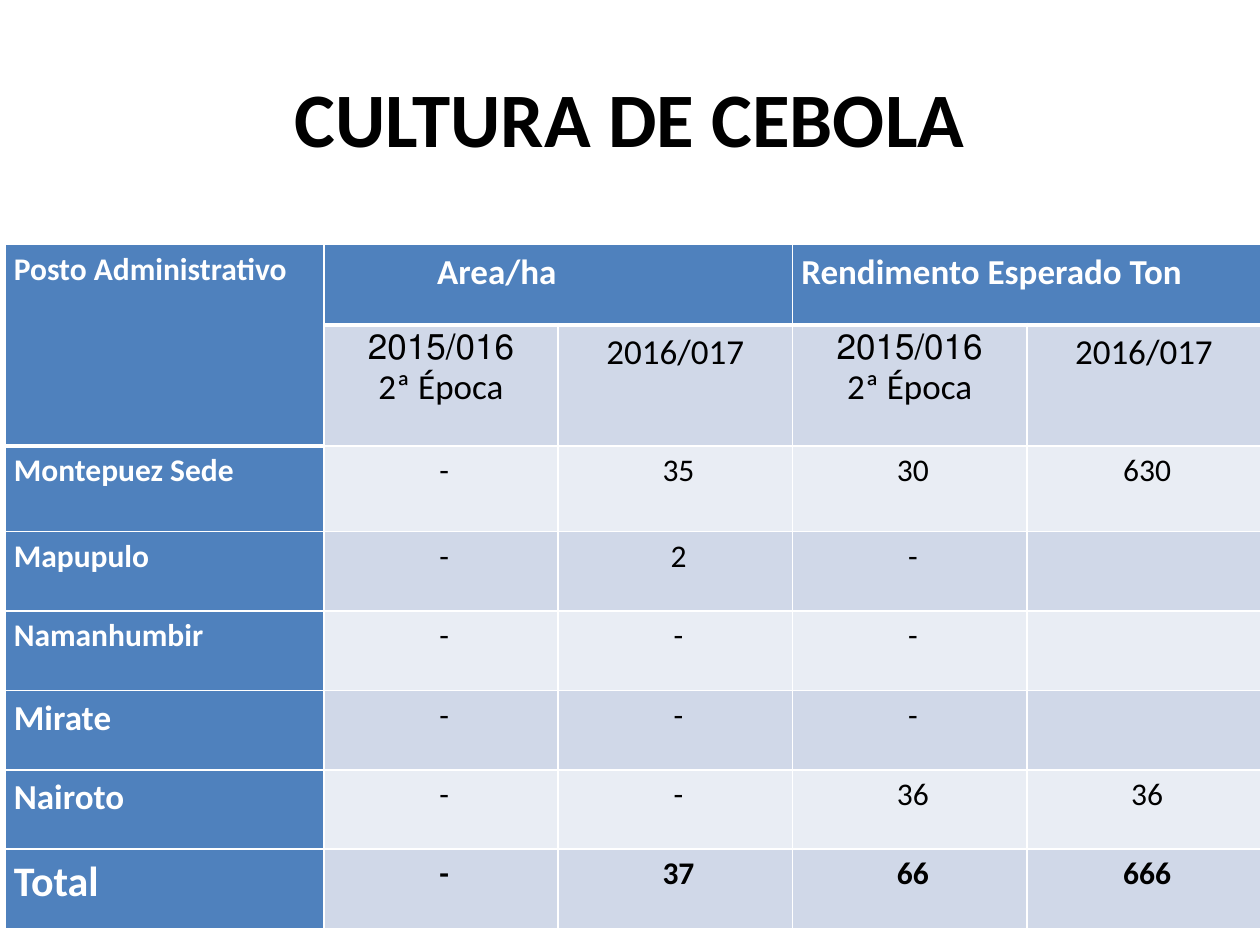
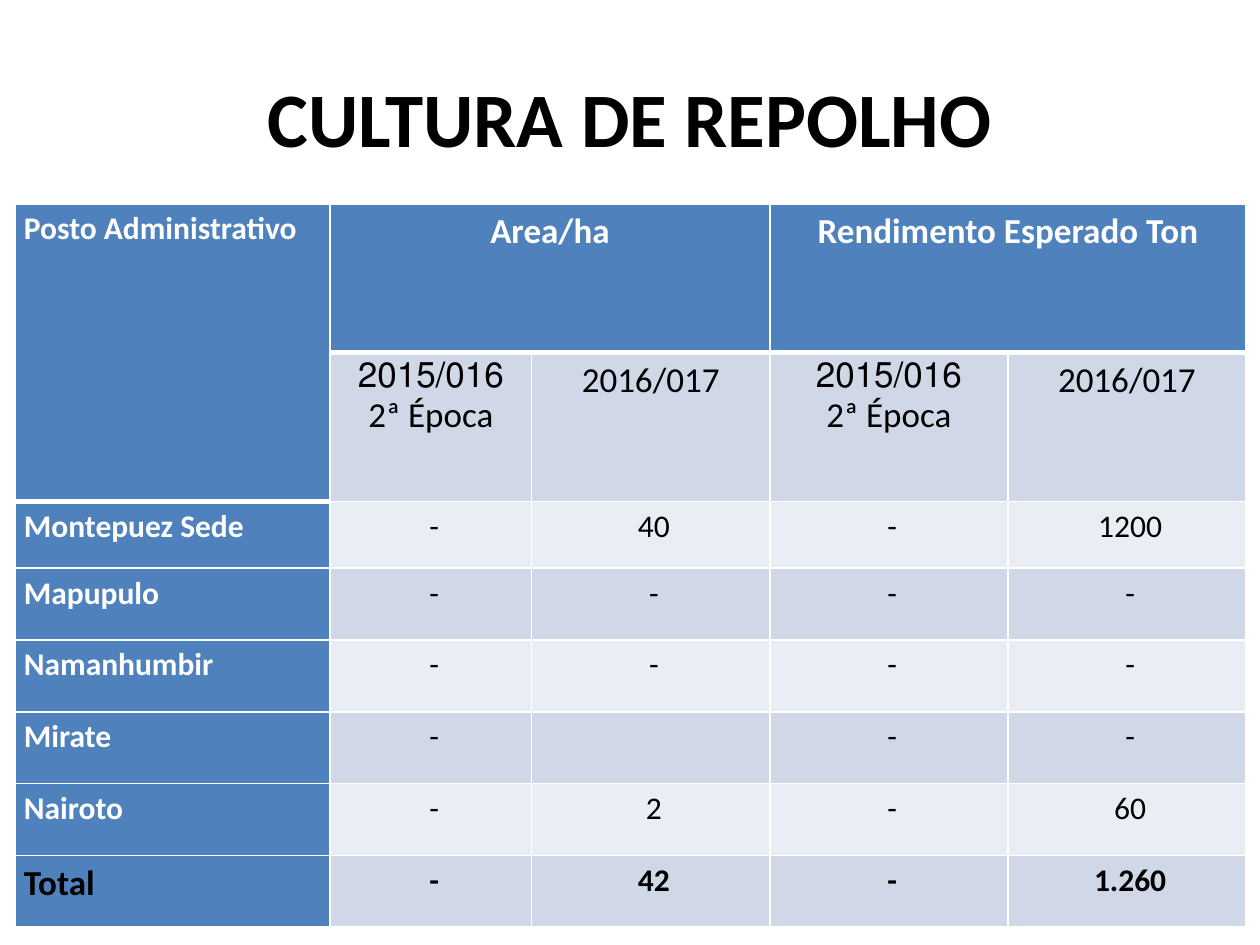
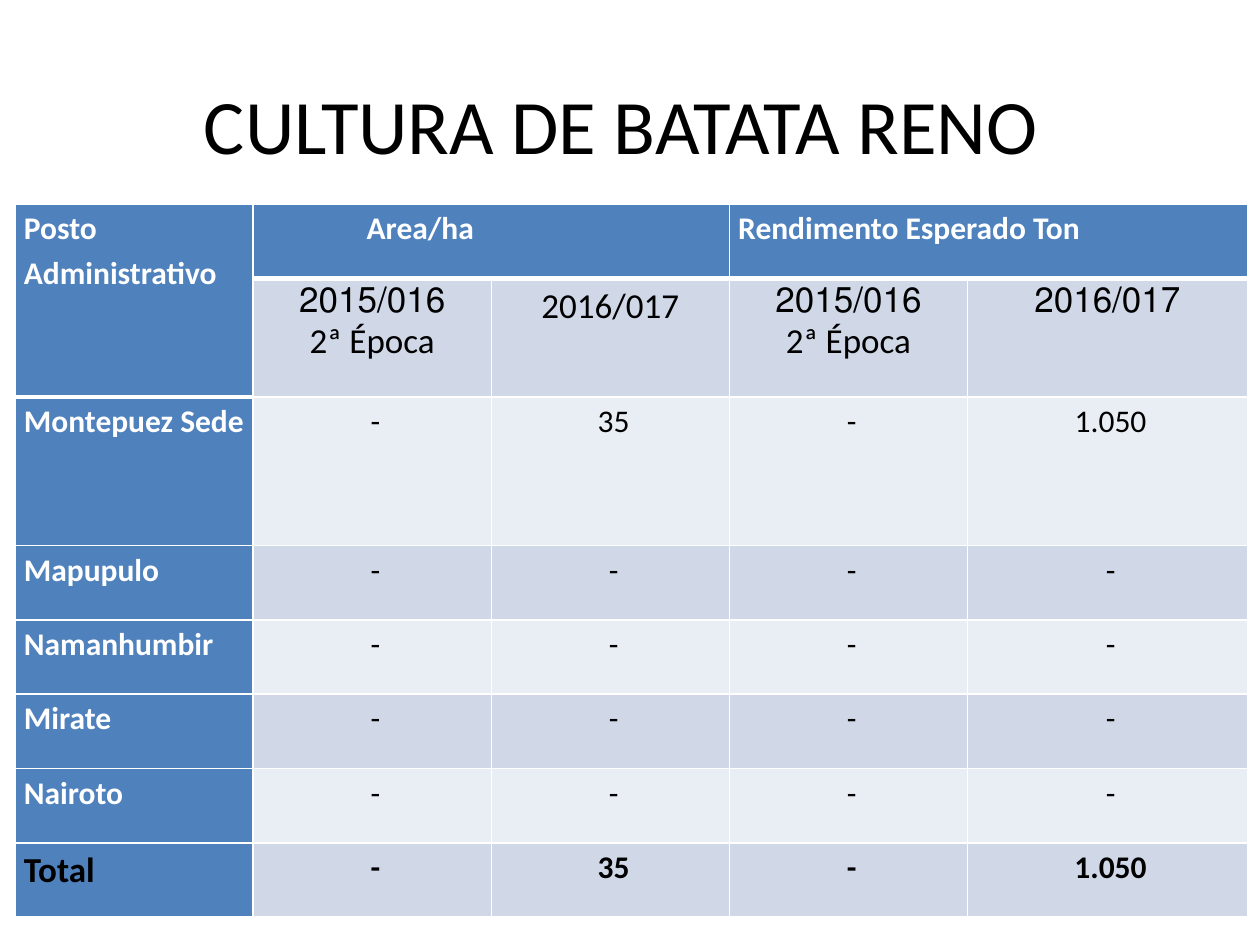
from lxml import etree
from pptx import Presentation
from pptx.dml.color import RGBColor
from pptx.enum.text import MSO_ANCHOR, PP_ALIGN
from pptx.oxml.ns import qn
from pptx.util import Inches, Pt

LEFT, CENTER = PP_ALIGN.LEFT, PP_ALIGN.CENTER
MIDDLE = MSO_ANCHOR.MIDDLE

FONT = "Calibri"
BLACK = RGBColor(0x00, 0x00, 0x00)
WHITE = RGBColor(0xFF, 0xFF, 0xFF)
HEADER_BLUE = RGBColor(0x4F, 0x81, 0xBD)
BAND_DARK = RGBColor(0xD0, 0xD8, 0xE8)
BAND_LIGHT = RGBColor(0xE9, 0xED, 0xF4)

POSTS = ["Montepuez Sede", "Mapupulo", "Namanhumbir", "Mirate", "Nairoto", "Total"]
SEASONS = [["2015/016", "2ª Época"], ["2016/017"]] * 2

# One entry per slide: title, table geometry, text sizes and values by post
CROPS = [
    dict(title="CULTURA DE CEBOLA", title_at=(0.5, 0.3), title_bold=True,
         table_at=(0.04, 1.94),
         columns=[2.53, 1.86, 1.86, 1.86, 1.86],
         rows=[0.64, 0.96, 0.68] + [0.63] * 5,
         header_size=20, header_centered=False, rtl_columns=(1, 3),
         post_sizes=[18, 18, 18, 20, 20, 24], total_color=WHITE,
         values=[["-", "35", "30", "630"], ["-", "2", "-", ""],
                 ["-", "-", "-", ""], ["-", "-", "-", ""],
                 ["-", "-", "36", "36"], ["-", "37", "66", "666"]]),
    dict(title="CULTURA DE REPOLHO", title_at=(0.5, 0.3), title_bold=True,
         table_at=(0.12, 1.62),
         columns=[2.5, 1.6, 1.89, 1.89, 1.89],
         rows=[1.18, 1.18, 0.53] + [0.57] * 5,
         header_size=20, header_centered=True, rtl_columns=(1, 3),
         post_sizes=[18] * 5 + [20], total_color=BLACK,
         values=[["-", "40", "-", "1200"], ["-"] * 4, ["-"] * 4,
                 ["-", "", "-", "-"], ["-", "2", "-", "60"],
                 ["-", "42", "-", "1.260"]]),
    dict(title="CULTURA DE BATATA RENO", title_at=(0.43, 0.36), title_bold=False,
         table_at=(0.12, 1.62),
         columns=[1.89, 1.89, 1.89, 1.89, 2.22],
         rows=[0.59, 0.94, 1.18] + [0.59] * 5,
         header_size=18, header_centered=False, rtl_columns=(1, 3, 4),
         post_sizes=[18] * 5 + [20], total_color=BLACK,
         values=[["-", "35", "-", "1.050"], ["-"] * 4, ["-"] * 4,
                 ["-"] * 4, ["-"] * 4, ["-", "35", "-", "1.050"]]),
]


def write(frame, lines, size, color, bold, align, spacing=None, indent=0, rtl=False):
    for index, line in enumerate(lines):
        paragraph = frame.paragraphs[0] if index == 0 else frame.add_paragraph()
        paragraph.alignment = align
        if spacing:
            paragraph.line_spacing = spacing
        properties = paragraph._p.get_or_add_pPr()
        if indent:
            properties.set("marL", str(Inches(indent)))
            properties.set("indent", "0")
        if rtl:
            properties.set("rtl", "1")
        run = paragraph.add_run()
        run.text = line
        run.font.name = FONT
        run.font.size = Pt(size)
        run.font.bold = bold
        run.font.color.rgb = color


def style_cell(cell, fill, thick_sides, margins=None):
    properties = cell._tc.get_or_add_tcPr()
    for side in "LRTB":
        width = Pt(3 if side in thick_sides else 1)
        line = etree.SubElement(properties, qn(f"a:ln{side}"), w=str(width))
        solid = etree.SubElement(line, qn("a:solidFill"))
        etree.SubElement(solid, qn("a:srgbClr"), val=str(WHITE))
    cell.fill.solid()
    cell.fill.fore_color.rgb = fill
    if margins:
        cell.margin_left, cell.margin_right = Inches(margins[0]), Inches(margins[1])
        cell.margin_top = cell.margin_bottom = 0


presentation = Presentation()
presentation.slide_width = Inches(10)
presentation.slide_height = Inches(7.5)

for crop in CROPS:
    slide = presentation.slides.add_slide(presentation.slide_layouts[6])

    # Title
    left, top = crop["title_at"]
    title = slide.shapes.add_textbox(Inches(left), Inches(top), Inches(9), Inches(1.25))
    title.text_frame.word_wrap = True
    title.text_frame.vertical_anchor = MIDDLE
    write(title.text_frame, [crop["title"]], 44, BLACK, crop["title_bold"], CENTER)

    # Table grid
    columns, rows = crop["columns"], crop["rows"]
    left, top = crop["table_at"]
    table = slide.shapes.add_table(
        len(rows), len(columns), Inches(left), Inches(top),
        Inches(sum(columns)), Inches(sum(rows))).table
    table.first_row = table.horz_banding = False
    for column, width in zip(table.columns, columns):
        column.width = Inches(width)
    for row, height in zip(table.rows, rows):
        row.height = Inches(height)
    table.cell(0, 0).merge(table.cell(1, 0))
    table.cell(0, 1).merge(table.cell(0, 2))
    table.cell(0, 3).merge(table.cell(0, 4))

    # Fills, margins and the thick rule under the header
    for r in range(len(rows)):
        for c in range(len(columns)):
            if r == 0 or c == 0:
                fill = HEADER_BLUE
            else:
                fill = BAND_DARK if r % 2 else BAND_LIGHT
            last_header_row = 1 if c == 0 else 0
            thick = ""
            if r <= last_header_row:
                thick = "B"
            elif r == last_header_row + 1:
                thick = "T"
            if c > 0 and (r == 1 or r == 0 and crop["header_centered"]):
                margins = None
            else:
                margins = (0.12, 0.07) if r > 1 and c > 0 else (0.07, 0.07)
            style_cell(table.cell(r, c), fill, thick, margins)

    # Header rows
    write(table.cell(0, 0).text_frame, ["Posto Administrativo"], 18, WHITE, True, LEFT, 1.15)
    centered = crop["header_centered"]
    for c, heading, indent in [(1, "Area/ha", 0.83), (3, "Rendimento Esperado Ton", 0)]:
        write(table.cell(0, c).text_frame, [heading], crop["header_size"], WHITE, True,
              CENTER if centered else LEFT, None if centered else 1.15,
              0 if centered else indent)
    for c, season in enumerate(SEASONS, start=1):
        write(table.cell(1, c).text_frame, season, 20, BLACK, False, CENTER,
              rtl=c in crop["rtl_columns"])

    # Posts and their values
    for r, (post, size, values) in enumerate(
            zip(POSTS, crop["post_sizes"], crop["values"]), start=2):
        is_total = post == "Total"
        write(table.cell(r, 0).text_frame, [post], size,
              crop["total_color"] if is_total else WHITE, True, LEFT, 1.15)
        for c, value in enumerate(values, start=1):
            if value:
                write(table.cell(r, c).text_frame, [value], 18, BLACK, is_total, CENTER, 1.15)

presentation.save("out.pptx")
